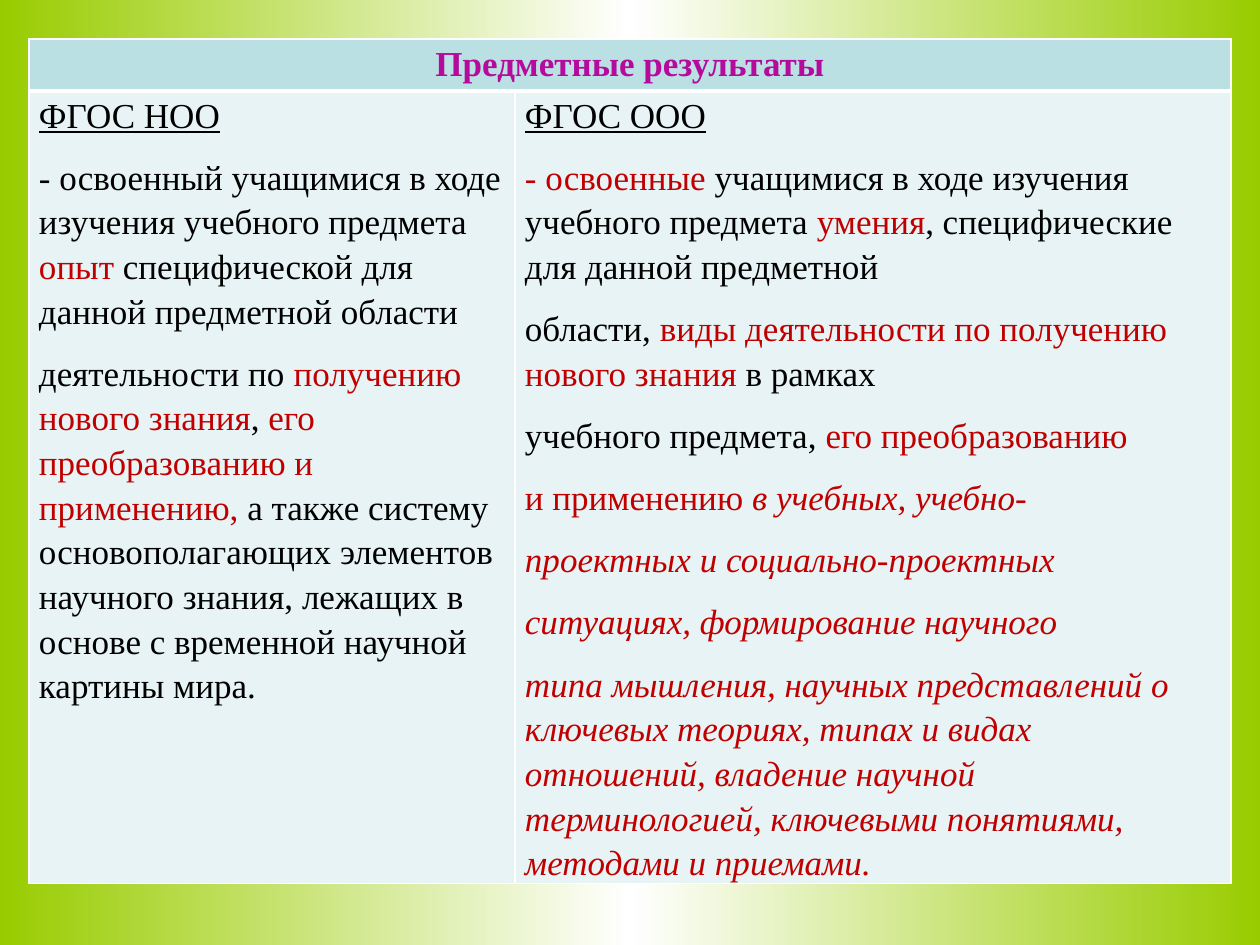
from copy import deepcopy
from dataclasses import dataclass

from lxml.etree import SubElement
from pptx import Presentation
from pptx.dml.color import RGBColor
from pptx.enum.text import PP_ALIGN
from pptx.oxml.ns import qn
from pptx.slide import Slide
from pptx.table import _Cell
from pptx.util import Emu, Pt

PIXELS_PER_INCH = 126


@dataclass(frozen=True)
class Theme:
    font: str = "Times New Roman"
    text_size: int = 20
    line_spacing: float = 1.15
    space_after: int = 10
    black: str = "000000"
    red: str = "C00000"
    title: str = "B50B9D"
    header_fill: str = "BBE0E3"
    body_fill: str = "E7F3F4"
    border: str = "FFFFFF"
    border_width: int = 1
    header_rule_width: int = 3
    background: tuple[str, ...] = ("99CC00", "FFFFFF", "99CC00")


THEME = Theme()


@dataclass(frozen=True)
class Span:
    text: str
    color: str = THEME.black
    bold: bool = False
    italic: bool = False
    underline: bool = False


def red(text: str, italic: bool = False) -> Span:
    return Span(text, THEME.red, italic=italic)


@dataclass(frozen=True)
class CellContent:
    paragraphs: list[list[Span]]
    fill: str = THEME.body_fill
    bottom_width: int = THEME.border_width
    alignment: PP_ALIGN = PP_ALIGN.LEFT


HEADER = CellContent(
    [[Span("Предметные результаты", THEME.title, bold=True)]],
    THEME.header_fill,
    THEME.header_rule_width,
    PP_ALIGN.CENTER,
)
PRIMARY_SCHOOL = CellContent([
    [Span("ФГОС НОО", underline=True)],
    [
        Span("- освоенный учащимися в ходе изучения учебного предмета "),
        red("опыт"),
        Span(" специфической для данной предметной области"),
    ],
    [
        Span("деятельности по "),
        red("получению нового знания"),
        Span(", "),
        red("его преобразованию и применению,"),
        Span(" а также систему основополагающих элементов научного знания, "
             "лежащих в основе с временной научной картины мира."),
    ],
])
SECONDARY_SCHOOL = CellContent([
    [Span("ФГОС ООО", underline=True)],
    [
        red("- освоенные "),
        Span("учащимися в ходе изучения учебного предмета "),
        red("умения"),
        Span(", специфические для данной предметной"),
    ],
    [
        Span("области, "),
        red("виды деятельности по получению нового знания "),
        Span("в рамках"),
    ],
    [Span("учебного предмета, "), red("его преобразованию")],
    [red("и применению "), red("в учебных, учебно-", italic=True)],
    [red("проектных и социально-проектных", italic=True)],
    [red("ситуациях, формирование научного", italic=True)],
    [red("типа мышления, научных представлений о ключевых теориях, типах и видах "
         "отношений, владение научной терминологией, ключевыми понятиями, "
         "методами и приемами.", italic=True)],
])
HEADER_REST = CellContent([], HEADER.fill, HEADER.bottom_width)
ROWS = [[HEADER, HEADER_REST], [PRIMARY_SCHOOL, SECONDARY_SCHOOL]]
COLUMN_WIDTHS = [486, 716]
ROW_HEIGHTS = [52, 792]
TABLE_LEFT, TABLE_TOP = 29, 39
CELL_MARGIN = 10


def px(pixels: int) -> Emu:
    return Emu(round(pixels * 914400 / PIXELS_PER_INCH))


def paint_background(slide: Slide) -> None:
    fill = slide.background.fill
    fill.gradient()
    fill.gradient_angle = 0
    stop_list = slide.element.find(".//" + qn("a:gsLst"))
    stop_list.insert(1, deepcopy(stop_list[0]))
    for index, (stop, color) in enumerate(zip(fill.gradient_stops, THEME.background)):
        stop.color.rgb = RGBColor.from_string(color)
        stop.position = index / (len(THEME.background) - 1)


def add_borders(cell: _Cell, top_width: int, bottom_width: int) -> None:
    properties = cell._tc.get_or_add_tcPr()
    widths = {
        "a:lnL": THEME.border_width,
        "a:lnR": THEME.border_width,
        "a:lnT": top_width,
        "a:lnB": bottom_width,
    }
    for tag, width in widths.items():
        line = SubElement(properties, qn(tag), w=str(int(Pt(width))))
        solid_fill = SubElement(line, qn("a:solidFill"))
        SubElement(solid_fill, qn("a:srgbClr"), val=THEME.border)


def write_paragraphs(cell: _Cell, content: CellContent) -> None:
    text_frame = cell.text_frame
    for index, spans in enumerate(content.paragraphs):
        paragraph = text_frame.add_paragraph() if index else text_frame.paragraphs[0]
        paragraph.alignment = content.alignment
        paragraph.line_spacing = THEME.line_spacing
        paragraph.space_after = Pt(THEME.space_after)
        for span in spans:
            run = paragraph.add_run()
            run.text = span.text
            run.font.name = THEME.font
            run.font.size = Pt(THEME.text_size)
            run.font.bold = span.bold
            run.font.italic = span.italic
            run.font.underline = span.underline
            run.font.color.rgb = RGBColor.from_string(span.color)


def fill_cell(cell: _Cell, content: CellContent, top_width: int) -> None:
    cell.margin_left = cell.margin_right = px(CELL_MARGIN)
    cell.margin_top = cell.margin_bottom = 0
    add_borders(cell, top_width, content.bottom_width)
    cell.fill.solid()
    cell.fill.fore_color.rgb = RGBColor.from_string(content.fill)
    write_paragraphs(cell, content)


def add_results_table(slide: Slide) -> None:
    table = slide.shapes.add_table(
        len(ROWS), len(COLUMN_WIDTHS), px(TABLE_LEFT), px(TABLE_TOP),
        px(sum(COLUMN_WIDTHS)), px(sum(ROW_HEIGHTS)),
    ).table
    table.horz_banding = False
    for column, width in zip(table.columns, COLUMN_WIDTHS):
        column.width = px(width)
    for row, height in zip(table.rows, ROW_HEIGHTS):
        row.height = px(height)
    table.cell(0, 0).merge(table.cell(0, 1))
    for row_index, contents in enumerate(ROWS):
        top_width = THEME.header_rule_width if row_index else THEME.border_width
        for column_index, content in enumerate(contents):
            fill_cell(table.cell(row_index, column_index), content, top_width)


def main() -> None:
    presentation = Presentation()
    presentation.slide_width = px(1260)
    presentation.slide_height = px(945)
    slide = presentation.slides.add_slide(presentation.slide_layouts[6])
    paint_background(slide)
    add_results_table(slide)
    presentation.save("out.pptx")


if __name__ == "__main__":
    main()
